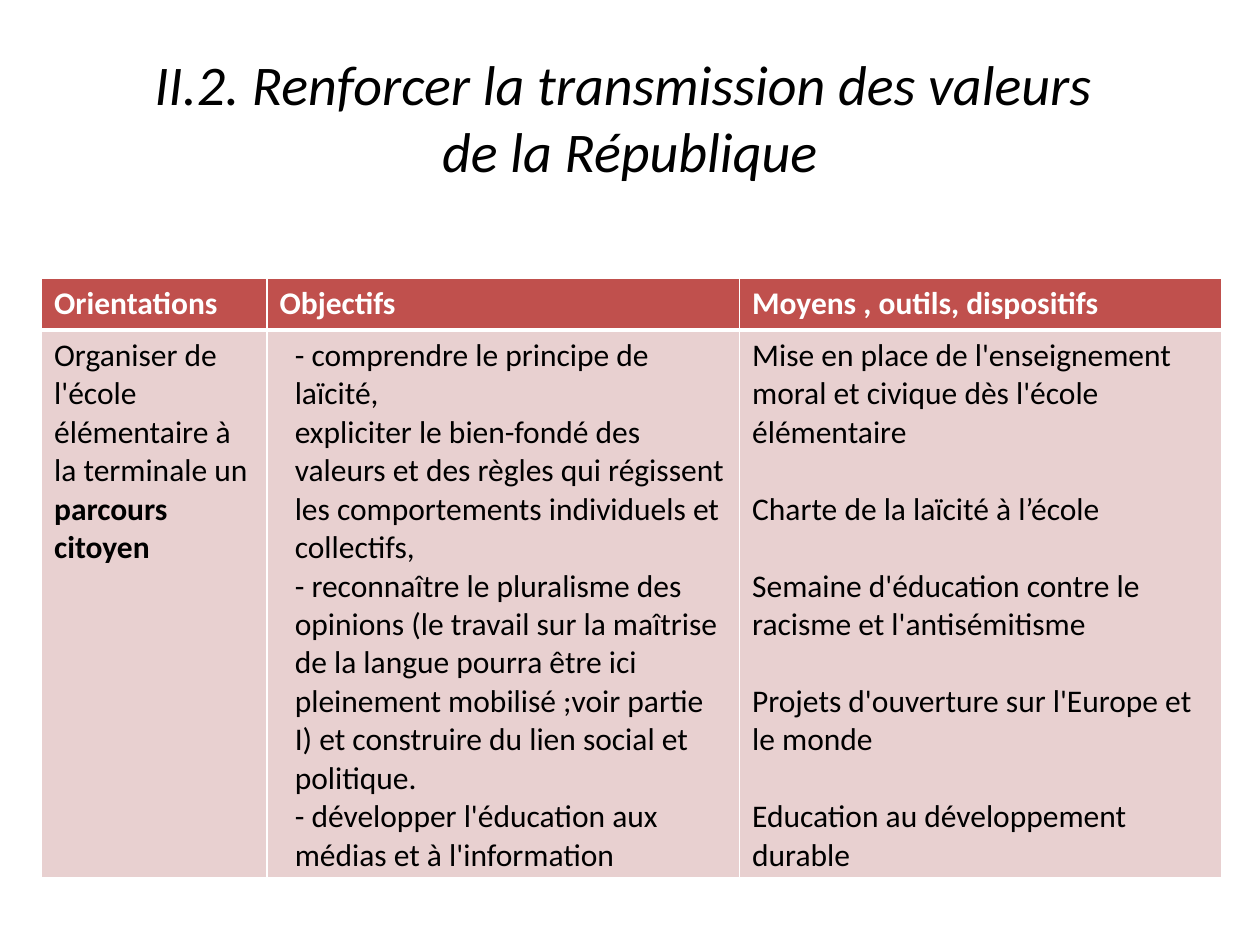
from dataclasses import dataclass

from lxml import etree
from pptx import Presentation
from pptx.dml.color import RGBColor
from pptx.enum import text
from pptx.oxml.ns import qn
from pptx.util import Inches, Pt


@dataclass(frozen=True)
class Theme:
    font: str = "Calibri"
    title_size: int = 32
    body_size: int = 18
    ink: str = "000000"
    white: str = "FFFFFF"
    header: str = "C0504D"
    body: str = "E8D0D0"
    thin: float = 1
    thick: float = 3


THEME = Theme()

TITLE = "II.2. Renforcer la transmission des valeurs \vde la République"
COLUMN_WIDTHS = [1.79, 3.75, 3.83]
ROW_HEIGHTS = [0.41, 4.35]
HEADERS = ["Orientations", "Objectifs", "Moyens , outils, dispositifs"]
ORIENTATION = "Organiser de l'école élémentaire à la terminale un "
ORIENTATION_KEY = "parcours citoyen"
OBJECTIVES = [
    "- comprendre le principe de laïcité,",
    "expliciter le bien-fondé des valeurs et des règles qui régissent "
    "les comportements individuels et collectifs,",
    "- reconnaître le pluralisme des opinions (le travail sur la maîtrise "
    "de la langue pourra être ici pleinement mobilisé ;voir partie I) "
    "et construire du lien social et politique.",
    "- développer l'éducation aux médias et à l'information",
]
MEANS = [
    "Mise en place de l'enseignement moral et civique dès l'école élémentaire",
    "Charte de la laïcité à l’école",
    "Semaine d'éducation contre le racisme et l'antisémitisme",
    "Projets d'ouverture sur l'Europe et le monde",
    "Education au développement durable",
]


def style_font(font, size, color):
    font.name = THEME.font
    font.size = Pt(size)
    font.color.rgb = RGBColor.from_string(color)


def add_title(page, left, top, width, height):
    box = page.shapes.add_textbox(left, top, width, height)
    frame = box.text_frame
    frame.word_wrap = True
    frame.vertical_anchor = text.MSO_ANCHOR.MIDDLE
    para = frame.paragraphs[0]
    para.text = TITLE
    para.alignment = text.PP_ALIGN.CENTER
    style_font(para.font, THEME.title_size, THEME.ink)
    para.font.italic = True


def set_borders(cell, top, bottom):
    """Draw white cell borders, with top and bottom widths in points."""
    properties = cell._tc.get_or_add_tcPr()
    widths = {"L": THEME.thin, "R": THEME.thin, "T": top, "B": bottom}
    for side, width in widths.items():
        line = etree.SubElement(properties, qn(f"a:ln{side}"), w=str(Pt(width)))
        fill = etree.SubElement(line, qn("a:solidFill"))
        etree.SubElement(fill, qn("a:srgbClr"), val=THEME.white)


def fill_cell(cell, lines, fill, color, indent=0, gap=0):
    """Write one paragraph per line, separated by gap points."""
    cell.fill.solid()
    cell.fill.fore_color.rgb = RGBColor.from_string(fill)
    frame = cell.text_frame
    for index, line in enumerate(lines):
        para = frame.add_paragraph() if index else frame.paragraphs[0]
        para.text = line
        style_font(para.font, THEME.body_size, color)
        para.font.bold = color == THEME.white
        if index and gap:
            para.space_before = Pt(gap)
        if indent:
            properties = para._p.get_or_add_pPr()
            properties.set("marL", str(Inches(indent)))
            properties.set("indent", "0")


def add_plan_table(page, left, top, width, height):
    frame = page.shapes.add_table(2, len(HEADERS), left, top, width, height)
    table = frame.table
    for column, column_width in zip(table.columns, COLUMN_WIDTHS):
        column.width = Inches(column_width)
    for row, row_height in zip(table.rows, ROW_HEIGHTS):
        row.height = Inches(row_height)

    for index, header in enumerate(HEADERS):
        set_borders(table.cell(0, index), THEME.thin, THEME.thick)
        set_borders(table.cell(1, index), THEME.thick, THEME.thin)
        fill_cell(table.cell(0, index), [header], THEME.header, THEME.white)

    orientation, objectives, means = table.rows[1].cells
    fill_cell(orientation, [ORIENTATION], THEME.body, THEME.ink)
    span = orientation.text_frame.paragraphs[0].add_run()
    span.text = ORIENTATION_KEY
    span.font.bold = True
    fill_cell(objectives, OBJECTIVES, THEME.body, THEME.ink, indent=0.12)
    fill_cell(means, MEANS, THEME.body, THEME.ink, gap=22)


def main():
    deck = Presentation()
    deck.slide_width, deck.slide_height = Inches(10), Inches(7.5)
    page = deck.slides.add_slide(deck.slide_layouts[6])
    add_title(page, Inches(0.5), Inches(0.3), Inches(9), Inches(1.25))
    add_plan_table(page, Inches(0.33), Inches(2.21),
                   Inches(sum(COLUMN_WIDTHS)), Inches(sum(ROW_HEIGHTS)))
    deck.save("out.pptx")


if __name__ == "__main__":
    main()
